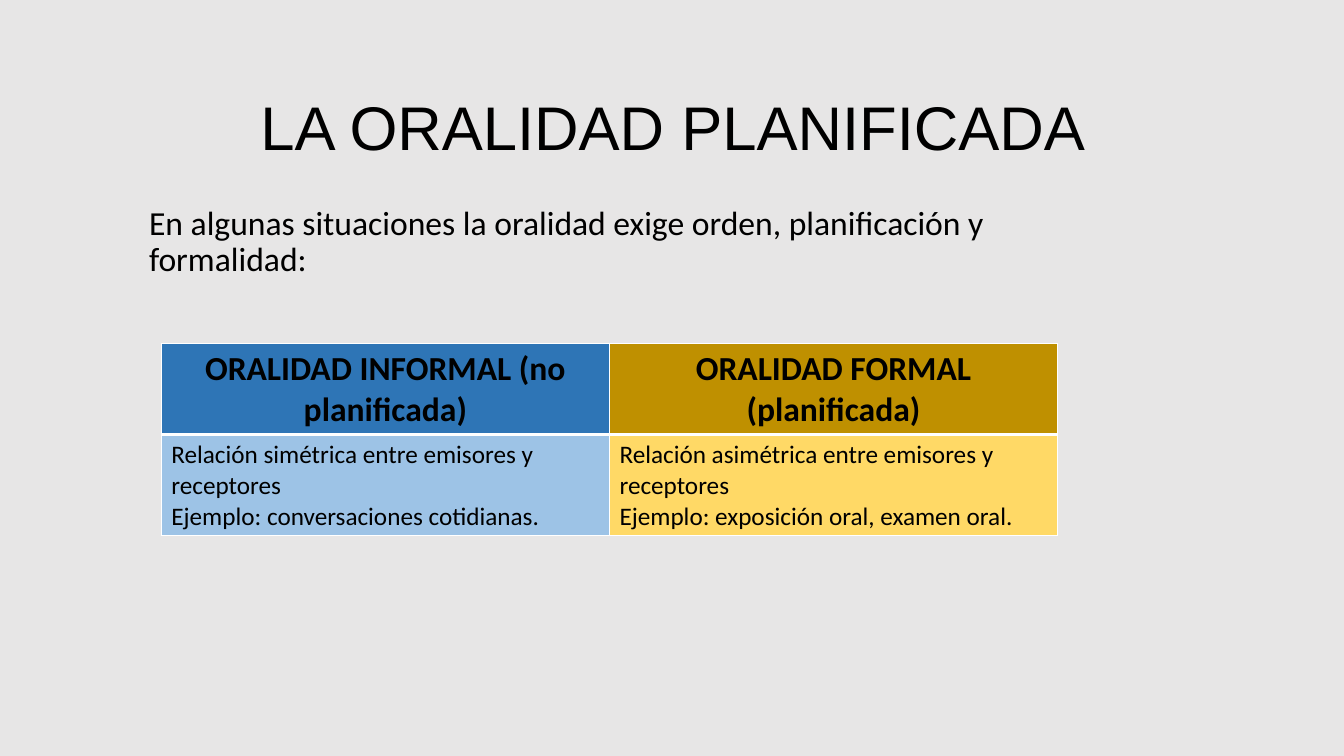
from lxml.etree import SubElement
from pptx import Presentation
from pptx.dml.color import RGBColor
from pptx.enum.text import MSO_ANCHOR, PP_ALIGN
from pptx.oxml.ns import qn
from pptx.util import Inches, Pt

TITLE = "LA ORALIDAD PLANIFICADA"
INTRO = "En algunas situaciones la oralidad exige orden, planificación y formalidad:"
COLUMNS = [
    {
        "heading": "ORALIDAD INFORMAL (no planificada)",
        "points": ["Relación simétrica entre emisores y receptores",
                   "Ejemplo: conversaciones cotidianas."],
        "fills": ("blue", "light_blue"),
    },
    {
        "heading": "ORALIDAD FORMAL (planificada)",
        "points": ["Relación asimétrica entre emisores y receptores",
                   "Ejemplo: exposición oral, examen oral."],
        "fills": ("gold", "light_gold"),
    },
]
COLORS = {
    "background": "E7E6E6", "text": "000000", "border": "FFFFFF",
    "blue": "2E75B6", "light_blue": "9DC3E6",
    "gold": "BF9000", "light_gold": "FFD966",
}
COLUMN_WIDTH = 4.445
ROW_HEIGHTS = (0.9, 1.0)
THIN, THICK = 1, 3


def rgb(name):
    return RGBColor.from_string(COLORS[name])


def write(frame, lines, size, font="Calibri", bold=False, align=PP_ALIGN.LEFT,
          line_spacing=None, space_before=None):
    """Put each line in its own paragraph of the text frame."""
    frame.word_wrap = True
    for index, line in enumerate(lines):
        paragraph = frame.add_paragraph() if index else frame.paragraphs[0]
        paragraph.alignment = align
        paragraph.line_spacing = line_spacing
        paragraph.space_before = space_before
        run = paragraph.add_run()
        run.text = line
        run.font.size = Pt(size)
        run.font.name = font
        run.font.bold = bold
        run.font.color.rgb = rgb("text")


def add_borders(cell, widths):
    """Draw the cell's edges; widths are points for left, right, top, bottom."""
    properties = cell._tc.get_or_add_tcPr()
    for edge, width in zip(("lnL", "lnR", "lnT", "lnB"), widths):
        line = SubElement(properties, qn(f"a:{edge}"), w=str(Pt(width)))
        fill = SubElement(line, qn("a:solidFill"))
        SubElement(fill, qn("a:srgbClr"), val=COLORS["border"])


def fill_cell(cell, fill, borders, lines, **style):
    add_borders(cell, borders)
    cell.fill.solid()
    cell.fill.fore_color.rgb = rgb(fill)
    write(cell.text_frame, lines, **style)


presentation = Presentation()
presentation.slide_width = Inches(13.33)
presentation.slide_height = Inches(7.5)
slide = presentation.slides.add_slide(presentation.slide_layouts[6])
slide.background.fill.solid()
slide.background.fill.fore_color.rgb = rgb("background")

title = slide.shapes.add_textbox(Inches(1.38), Inches(0.74), Inches(10.6), Inches(1.11))
title.text_frame.vertical_anchor = MSO_ANCHOR.MIDDLE
write(title.text_frame, [TITLE], 44, font="Arial", align=PP_ALIGN.CENTER, line_spacing=0.9)

intro = slide.shapes.add_textbox(Inches(1.38), Inches(2), Inches(9.4), Inches(1.26))
write(intro.text_frame, [INTRO], 24, line_spacing=0.9, space_before=Pt(10))

comparison = slide.shapes.add_table(
    len(ROW_HEIGHTS), len(COLUMNS), Inches(1.6), Inches(3.41),
    Inches(COLUMN_WIDTH * len(COLUMNS)), Inches(sum(ROW_HEIGHTS))).table
for row, height in zip(comparison.rows, ROW_HEIGHTS):
    row.height = Inches(height)
for index, column in enumerate(COLUMNS):
    comparison.columns[index].width = Inches(COLUMN_WIDTH)
    heading_fill, points_fill = column["fills"]
    fill_cell(comparison.cell(0, index), heading_fill, (THIN, THIN, THIN, THICK),
              [column["heading"]], size=24, bold=True, align=PP_ALIGN.CENTER)
    fill_cell(comparison.cell(1, index), points_fill, (THIN, THIN, THICK, THIN),
              column["points"], size=18)

presentation.save("out.pptx")
